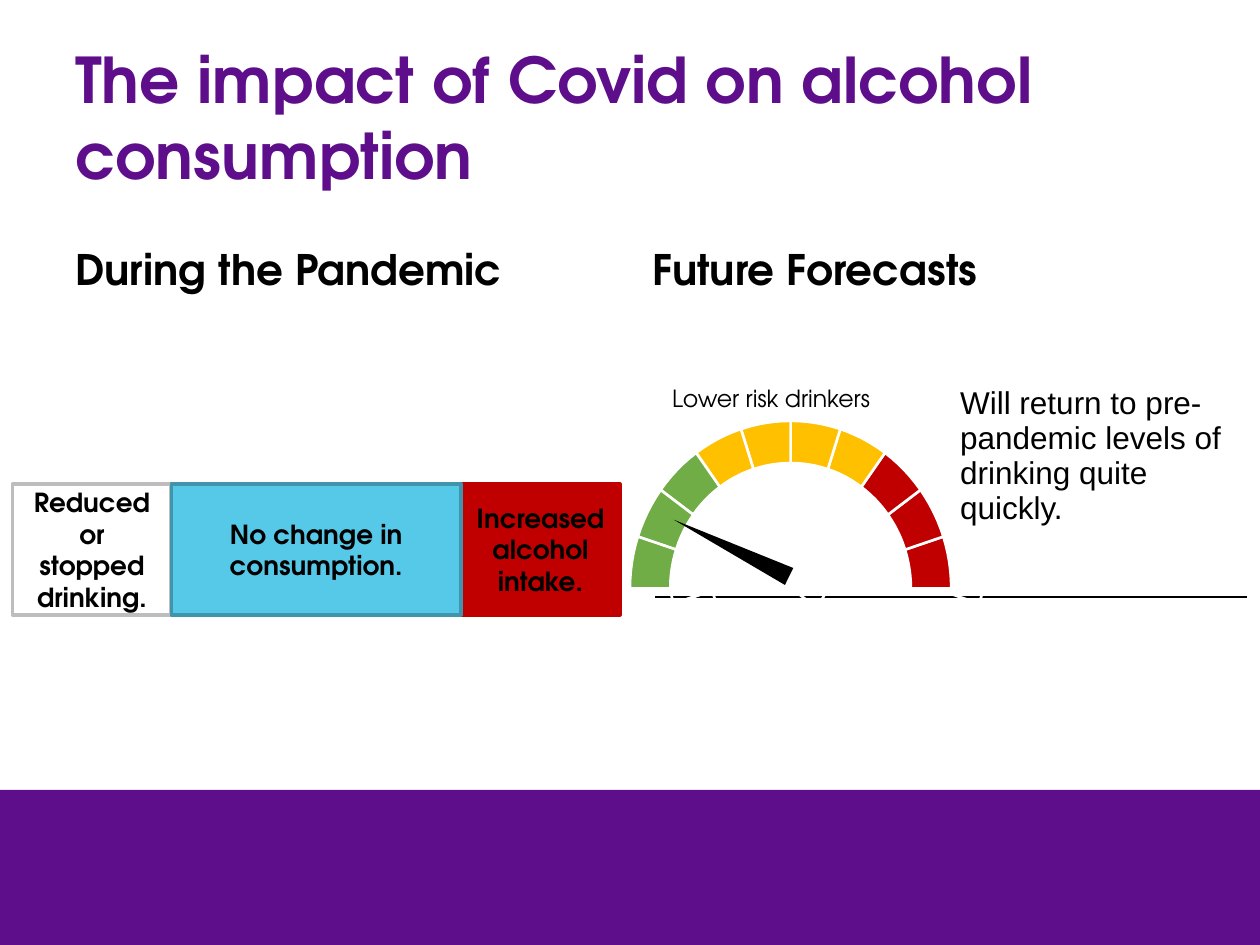
"""Build the slide on alcohol consumption during and after Covid."""
import dataclasses
import math

import lxml.etree
import pptx
import pptx.dml.color
import pptx.enum.shapes
import pptx.enum.text
import pptx.oxml
import pptx.oxml.ns
import pptx.util

COLS, ROWS = 100, 75
WIDE, HIGH = pptx.util.Inches(10), pptx.util.Inches(7.5)
FACE = "TeX Gyre Adventor"
PURPLE, BLACK, WHITE = "5E0D8B", "000000", "FFFFFF"
GREEN, AMBER, RED = "70AD47", "FFC000", "C00000"
STEP = 18
ALIGN = pptx.enum.text.PP_ALIGN
ANCHOR = pptx.enum.text.MSO_ANCHOR
SHAPE = pptx.enum.shapes.MSO_SHAPE


@dataclasses.dataclass
class Box:
    """Hold a place in grid columns and rows."""
    col: float
    row: float
    cols: float
    rows: float

    def place(self) -> tuple:
        """Return left, top, width and height."""
        return across(self.col), down(self.row), across(self.cols), down(self.rows)


@dataclasses.dataclass
class Label:
    """Hold a text box and its style."""
    text: str
    box: Box
    size: float
    color: str = BLACK
    bold: bool = True
    anchor: object = ANCHOR.BOTTOM
    align: object = ALIGN.LEFT


@dataclasses.dataclass
class Share:
    """Hold one block of the bar of drinkers."""
    text: str
    col: float
    cols: float
    fill: str
    edge: str


@dataclasses.dataclass
class Slice:
    """Hold one slice of a gauge ring."""
    turn: int
    fill: str = ""
    col: float = 62.75
    row: float = 46.7


LABELS = [
    Label("The impact of Covid on alcohol consumption", Box(5, 3, 90, 12.5),
          36, PURPLE, anchor=ANCHOR.MIDDLE),
    Label("During the Pandemic", Box(5, 16.8, 44.2, 7), 24),
    Label("Future Forecasts", Box(50.8, 16.8, 44.2, 7), 24),
]
RISK = Label("Lower risk drinkers", Box(50.6, 30, 21.2, 3.3), 13.5,
             bold=False, anchor=ANCHOR.TOP, align=ALIGN.CENTER)
SHARES = [
    Share("Reduced or stopped drinking.", 1, 12.6, WHITE, "BDBDBD"),
    Share("Increased alcohol intake.", 36.6, 12.6, RED, RED),
    Share("No change in consumption.", 13.6, 23, "57C9E8", "4095AC"),
]
GHOSTS = [Slice(-1, "", 65.6, 43.8), Slice(-2, "", 54.5, 40.4),
          Slice(11, "", 65.6, 43.8), Slice(10, "", 65.6, 43.8)]
DIAL = [Slice(turn, fill) for turn, fill
        in enumerate([RED] * 3 + [AMBER] * 4 + [GREEN] * 3)]


def across(cols: float) -> int:
    """Turn grid columns into a length."""
    return round(WIDE * cols / COLS)


def down(rows: float) -> int:
    """Turn grid rows into a length."""
    return round(HIGH * rows / ROWS)


def tint(code: str) -> pptx.dml.color.RGBColor:
    """Turn a hex string into a colour."""
    return pptx.dml.color.RGBColor.from_string(code)


def paint(shape, fill: str, edge: str = "", width: float = 0) -> None:
    """Set the fill and line of a shape."""
    shape.shadow.inherit = False
    if fill:
        shape.fill.solid()
        shape.fill.fore_color.rgb = tint(fill)
    else:
        shape.fill.background()
    if edge:
        shape.line.color.rgb = tint(edge)
        shape.line.width = pptx.util.Pt(width)
    else:
        shape.line.fill.background()


def write(frame, text: str, size: float, color: str = BLACK, bold: bool = True,
          align=ALIGN.LEFT, face: str = FACE) -> None:
    """Add one run of text to a frame."""
    frame.word_wrap = True
    para = frame.paragraphs[0]
    para.alignment = align
    run = para.add_run()
    run.text = text
    run.font.name = face
    run.font.size = pptx.util.Pt(size)
    run.font.bold = bold
    run.font.color.rgb = tint(color)


def add_label(slide, label: Label) -> None:
    """Add a text box."""
    frame = slide.shapes.add_textbox(*label.box.place()).text_frame
    frame.vertical_anchor = label.anchor
    write(frame, label.text, label.size, label.color, label.bold, label.align)


def add_share(slide, share: Share) -> None:
    """Add one block of the bar."""
    box = Box(share.col, 38.4, share.cols, 10.4)
    shape = slide.shapes.add_shape(SHAPE.RECTANGLE, *box.place())
    paint(shape, share.fill, share.edge, 2)
    shape.text_frame.vertical_anchor = ANCHOR.MIDDLE
    write(shape.text_frame, share.text, 15, align=ALIGN.CENTER)


def add_slice(slide, part: Slice) -> None:
    """Add one slice of a ring."""
    def point(angle: float, wide: float, high: float) -> tuple:
        """Find a point on an ellipse around the centre."""
        turn = math.radians(angle)
        return (across(part.col + wide * math.cos(turn)),
                down(part.row - high * math.sin(turn)))

    angles = [part.turn * STEP + step for step in range(0, STEP + 1, 3)]
    rim = [point(angle, 12.75, 13.3) for angle in angles]
    hole = [point(angle, 9.55, 9.95) for angle in reversed(angles)]
    path = slide.shapes.build_freeform(*rim[0], scale=1.0)
    path.add_line_segments(rim[1:] + hole, close=True)
    paint(path.convert_to_shape(), part.fill, WHITE, 1.5)


def add_edge(cell, side: str, color: str = "") -> None:
    """Set one border of a table cell."""
    props = cell._tc.get_or_add_tcPr()
    edge = lxml.etree.SubElement(props, pptx.oxml.ns.qn("a:" + side), w="12700")
    fill = lxml.etree.SubElement(
        edge, pptx.oxml.ns.qn("a:solidFill" if color else "a:noFill"))
    if color:
        lxml.etree.SubElement(fill, pptx.oxml.ns.qn("a:srgbClr"), val=color)


def add_grid(slide) -> None:
    """Add the table with the forecast."""
    box = Box(52, 30.2, 47, 17.2)
    table = slide.shapes.add_table(1, 2, *box.place()).table
    table.first_row = table.horz_banding = False
    for cell in table.iter_cells():
        cell.margin_left = cell.margin_right = across(0.7)
        cell.margin_top = cell.margin_bottom = down(0.4)
        for side in ("lnL", "lnR", "lnT"):
            add_edge(cell, side)
        add_edge(cell, "lnB", BLACK)
        cell.fill.background()
    write(table.cell(0, 1).text_frame,
          "Will return to pre-pandemic levels of drinking quite quickly.",
          18, bold=False, face="Arial")


def main() -> None:
    """Build and save the slide."""
    deck = pptx.Presentation()
    deck.slide_width, deck.slide_height = WIDE, HIGH
    slide = deck.slides.add_slide(deck.slide_layouts[6])
    band = slide.shapes.add_shape(SHAPE.RECTANGLE, *Box(0, 62.7, 100, 12.3).place())
    paint(band, PURPLE)
    add_grid(slide)
    for label in LABELS:
        add_label(slide, label)
    for share in SHARES:
        add_share(slide, share)
    add_label(slide, RISK)
    for part in GHOSTS + DIAL:
        add_slice(slide, part)
    hand = slide.shapes.add_shape(
        SHAPE.ISOSCELES_TRIANGLE, *Box(57.3, 38.4, 1.5, 10.2).place())
    hand.rotation = 296.2
    paint(hand, BLACK)
    deck.save("out.pptx")


if __name__ == "__main__":
    main()
